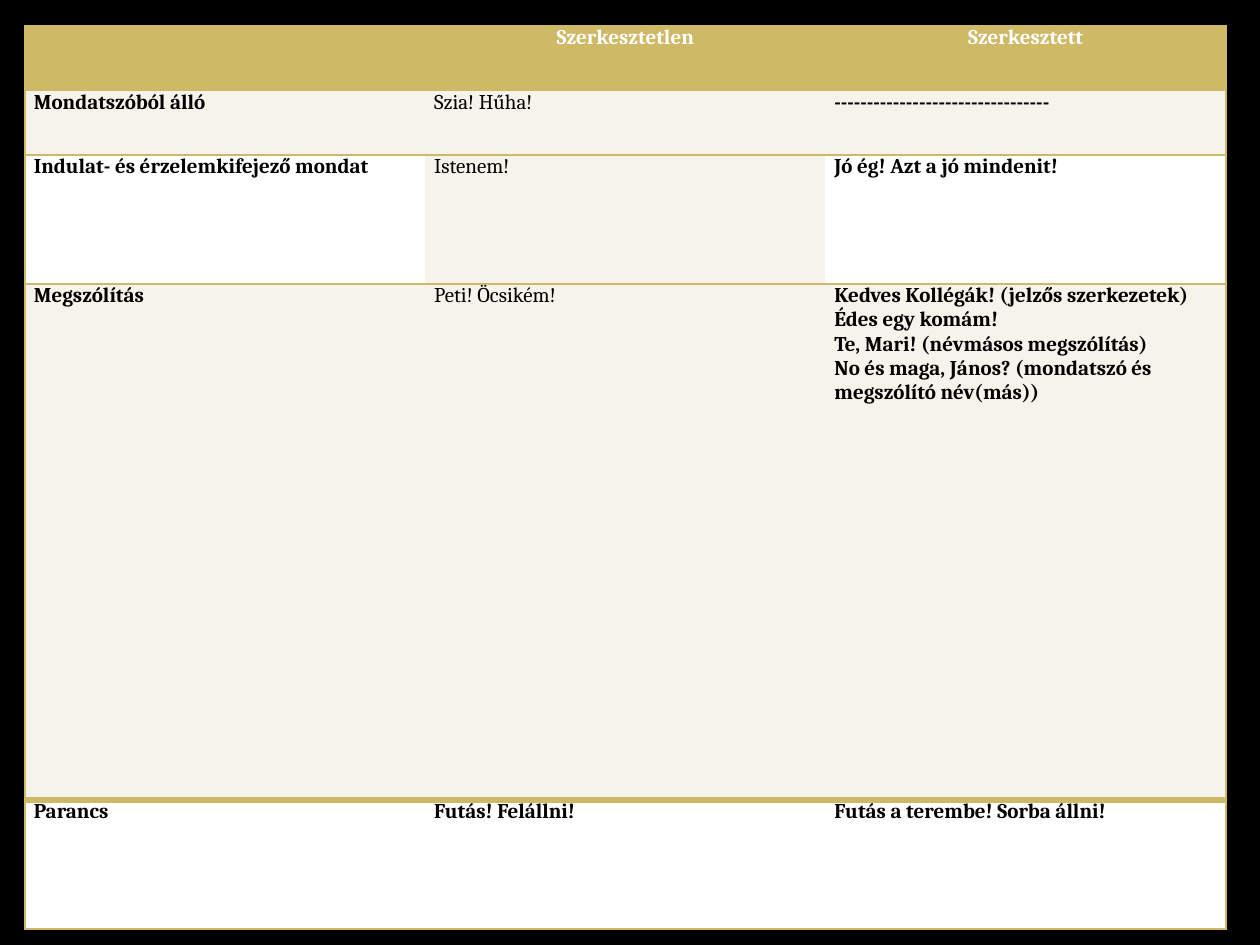
from lxml import etree
from pptx import Presentation
from pptx.dml.color import RGBColor
from pptx.enum import text
from pptx.oxml import ns
from pptx.util import Pt

COLORS = {"back": "000000", "gold": "CEB966", "cream": "F6F3EA",
          "white": "FFFFFF", "black": "000000"}

ROWS = [
    ["", "Szerkesztetlen", "Szerkesztett"],
    ["Mondatszóból álló", "Szia! Hűha!", "-" * 33],
    ["Indulat- és érzelemkifejező mondat", "Istenem!", "Jó ég! Azt a jó mindenit!"],
    ["Megszólítás", "Peti! Öcsikém!",
     "Kedves Kollégák! (jelzős szerkezetek)\n"
     "Édes egy komám!\n"
     "Te, Mari! (névmásos megszólítás)\n"
     "No és maga, János? (mondatszó és megszólító név(más))"],
    ["Parancs", "Futás! Felállni!", "Futás a terembe! Sorba állni!"],
]
ROW_UNITS = [1, 1, 2, 8, 2]
UNIT_HEIGHT = 36.87
COLUMN_WIDTH = 228.75
LAST_ROW, LAST_COLUMN = len(ROWS) - 1, len(ROWS[0]) - 1


def rgb(name):
    return RGBColor.from_string(COLORS[name])


def add_border(cell, side, width):
    """Draw one gold cell edge; a width of 0 hides it."""
    line = etree.SubElement(cell._tc.get_or_add_tcPr(), ns.qn("a:ln" + side))
    line.set("w", str(Pt(width)))
    if width:
        fill = etree.SubElement(line, ns.qn("a:solidFill"))
        etree.SubElement(fill, ns.qn("a:srgbClr")).set("val", COLORS["gold"])
    else:
        etree.SubElement(line, ns.qn("a:noFill"))


presentation = Presentation()
presentation.slide_width, presentation.slide_height = Pt(720), Pt(540)
slide = presentation.slides.add_slide(presentation.slide_layouts[6])
slide.background.fill.solid()
slide.background.fill.fore_color.rgb = rgb("back")

table = slide.shapes.add_table(
    len(ROWS), len(ROWS[0]), Pt(14.25), Pt(14.75),
    Pt(COLUMN_WIDTH * len(ROWS[0])), Pt(UNIT_HEIGHT * sum(ROW_UNITS))).table
table.horz_banding = False
for column in table.columns:
    column.width = Pt(COLUMN_WIDTH)
for row, units in zip(table.rows, ROW_UNITS):
    row.height = Pt(UNIT_HEIGHT * units)

for r, words in enumerate(ROWS):
    for c, content in enumerate(words):
        cell = table.cell(r, c)
        cell.margin_left = cell.margin_right = Pt(5.1)
        cell.margin_top = cell.margin_bottom = 0
        add_border(cell, "L", 1 if c == 0 else 0)
        add_border(cell, "R", 1 if c == LAST_COLUMN else 0)
        add_border(cell, "T", 4 if r == LAST_ROW else 1)
        add_border(cell, "B", 4 if r == LAST_ROW - 1 else 1)

        # The middle column is cream and regular between header and last row
        middle = c == 1 and 0 < r < LAST_ROW
        cell.fill.solid()
        cell.fill.fore_color.rgb = rgb(
            "gold" if r == 0 else "cream" if r % 2 or middle else "white")

        cell.text_frame.text = content
        for paragraph in cell.text_frame.paragraphs:
            paragraph.alignment = text.PP_ALIGN.LEFT if r else text.PP_ALIGN.CENTER
            for run in paragraph.runs:
                run.font.name = "Cambria"
                run.font.size = Pt(12)
                run.font.bold = not middle
                run.font.color.rgb = rgb("black" if r else "white")

presentation.save("out.pptx")
